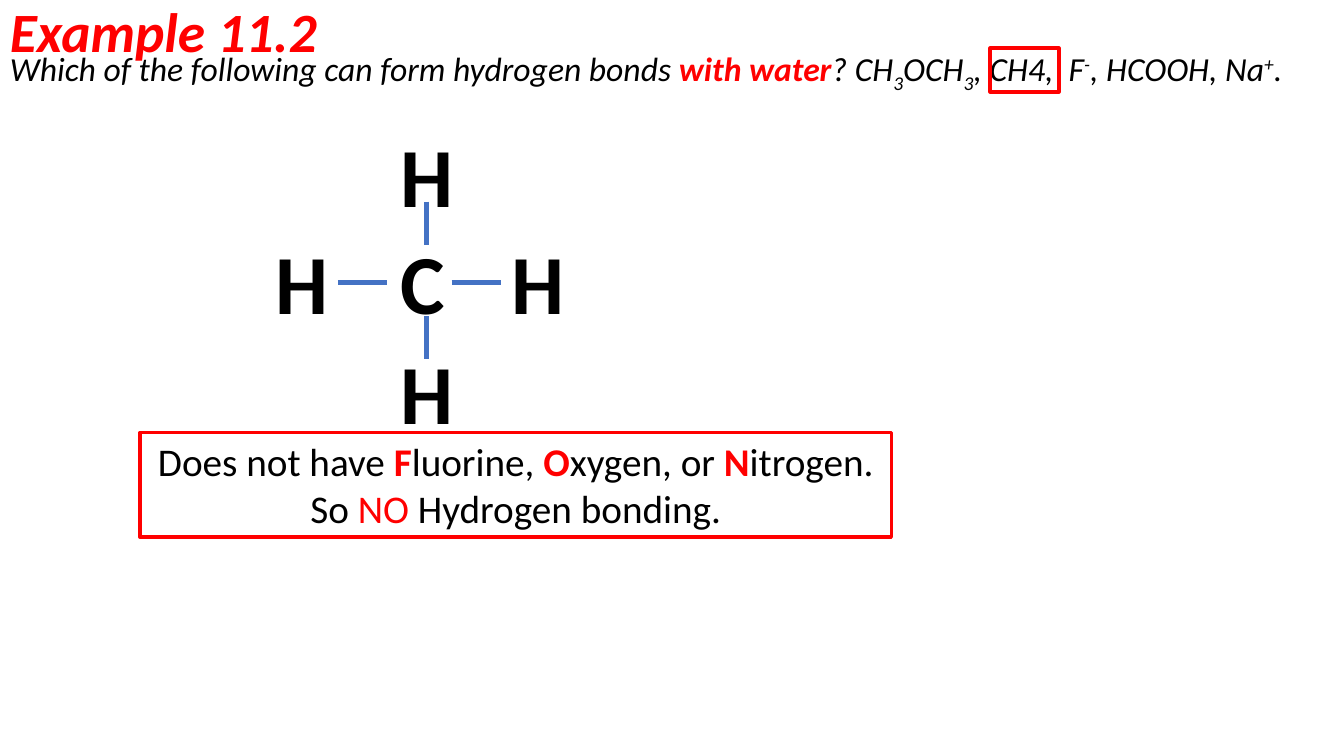
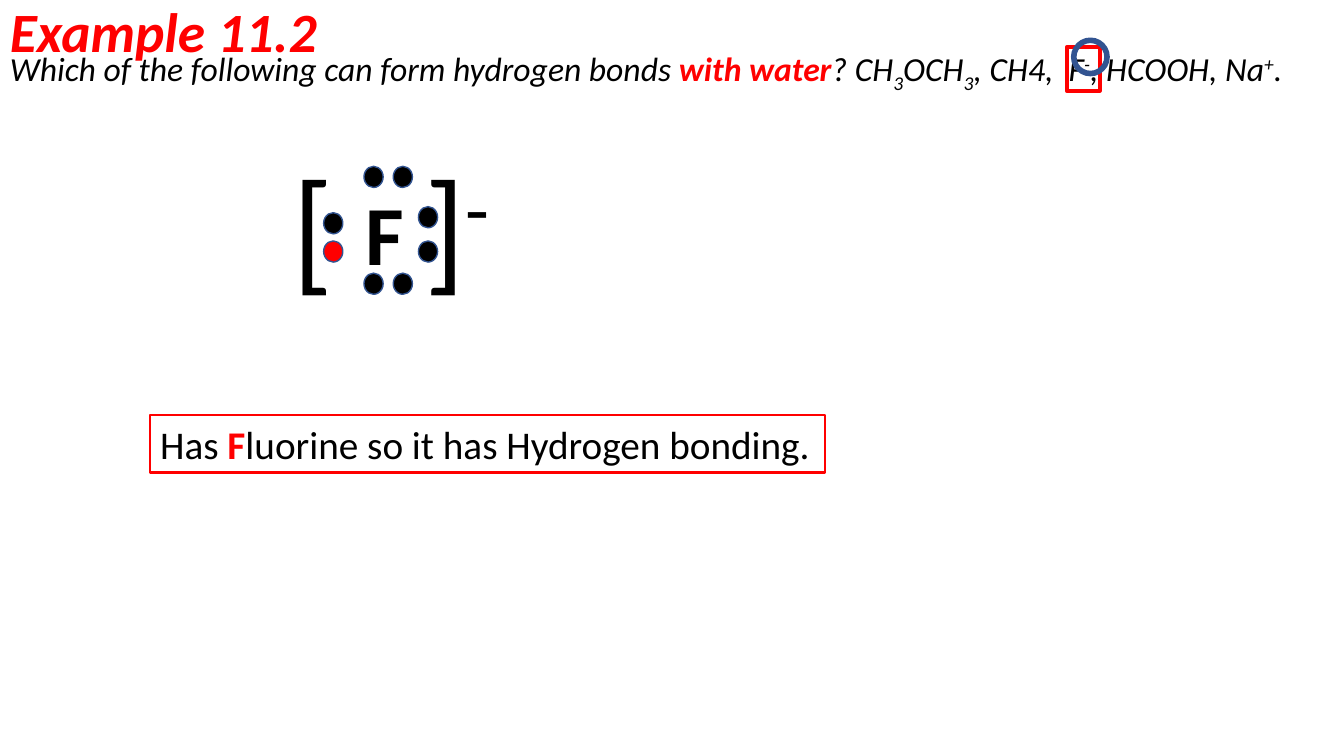
from pptx import Presentation
from pptx.dml.color import RGBColor
from pptx.enum.shapes import MSO_CONNECTOR, MSO_SHAPE
from pptx.enum.text import MSO_ANCHOR, PP_ALIGN
from pptx.oxml.ns import qn
from pptx.util import Inches, Pt
from lxml import etree

RECTANGLE, OVAL = MSO_SHAPE.RECTANGLE, MSO_SHAPE.OVAL
STRAIGHT = MSO_CONNECTOR.STRAIGHT
TOP, MIDDLE = MSO_ANCHOR.TOP, MSO_ANCHOR.MIDDLE
LEFT, CENTER = PP_ALIGN.LEFT, PP_ALIGN.CENTER

FONT = "Calibri"
RED, BLACK, BOND_BLUE, DOT_BLUE = "FF0000", "000000", "4472C4", "325491"
WIDTH, HEIGHT = 13.33, 7.5
BASELINES = {"sub": "-25000", "super": "30000"}

QUESTION = [
    ("Which of the following can form hydrogen bonds ", ""),
    ("with water", "red bold"), ("? CH", ""), ("3", "sub"), ("OCH", ""),
    ("3", "sub"), (", CH4,  F", ""), ("-", "super"), (", HCOOH, Na", ""),
    ("+", "super"), (".", ""),
]


def write(box, spans, size, color=BLACK, bold=False, italic=False,
          align=LEFT, anchor=TOP):
    """Fill a box with one paragraph; each span is (text, style words)."""
    frame = box.text_frame
    frame.word_wrap = True
    frame.vertical_anchor = anchor
    para = frame.paragraphs[0]
    para.alignment = align
    font = para.font
    font.name, font.size, font.bold, font.italic = FONT, Pt(size), bold, italic
    font.color.rgb = RGBColor.from_string(color)
    for text, style in spans:
        span = para.add_run()
        span.text = text
        for word in style.split():
            if word == "red":
                span.font.color.rgb = RGBColor.from_string(RED)
            elif word == "bold":
                span.font.bold = True
            else:
                span.font._element.set("baseline", BASELINES[word])
    return para


def draw(page, kind, area, line, weight, fill=None):
    shape = page.shapes.add_shape(kind, *map(Inches, area))
    shape.shadow.inherit = False
    shape.line.color.rgb = RGBColor.from_string(line)
    shape.line.width = Pt(weight)
    if fill:
        shape.fill.solid()
        shape.fill.fore_color.rgb = RGBColor.from_string(fill)
    else:
        shape.fill.background()
    return shape


deck = Presentation()
deck.slide_width, deck.slide_height = Inches(WIDTH), Inches(HEIGHT)
pages = [deck.slides.add_slide(deck.slide_layouts[6]) for _ in range(2)]
methane, fluoride = pages

# Shared heading and question
for page in pages:
    title = page.shapes.add_textbox(0, Inches(-0.01), Inches(11.5), Inches(0.71))
    heading = write(title, [("Example 11.2", "")], 39.6, RED, True, True,
                    anchor=MIDDLE)
    heading.line_spacing = 0.9
    question = page.shapes.add_textbox(0, Inches(0.43), Inches(WIDTH), Inches(0.5))
    write(question, QUESTION, 24, italic=True)

# Methane: a carbon with four hydrogens
draw(methane, RECTANGLE, (9.82, 0.48, 0.68, 0.43), RED, 2.75)

columns, rows = (2.63, 3.87, 4.98), (1.18, 2.24, 3.33)
atoms = [("H", 1, 0), ("H", 0, 1), ("C", 1, 1), ("H", 2, 1), ("H", 1, 2)]
for symbol, column, row in atoms:
    atom = methane.shapes.add_textbox(
        Inches(columns[column]), Inches(rows[row]), Inches(0.74), Inches(1.11))
    write(atom, [(symbol, "")], 60, bold=True)

bond_x, bond_y = 4.23, 2.8
bonds = [(bond_x, 2, bond_x, 2.43), (bond_x, 3.14, bond_x, 3.56),
         (3.35, bond_y, 3.84, bond_y), (4.48, bond_y, 4.97, bond_y)]
for ends in bonds:
    bond = methane.shapes.add_connector(STRAIGHT, *map(Inches, ends))
    bond.line.color.rgb = RGBColor.from_string(BOND_BLUE)
    bond.line.width = Pt(3.75)
    etree.SubElement(bond._element.spPr, qn("a:effectLst"))

answer = draw(methane, RECTANGLE, (1.39, 4.29, 7.45, 1.04), RED, 2.5)
write(answer, [
    ("Does not have ", ""), ("F", "red bold"), ("luorine, ", ""),
    ("O", "red bold"), ("xygen, or ", ""), ("N", "red bold"),
    ("itrogen. So ", ""), ("NO", "red"), (" Hydrogen bonding.", ""),
], 28, align=CENTER)

# Fluoride: a Lewis structure with four electron pairs
draw(fluoride, RECTANGLE, (10.58, 0.47, 0.33, 0.43), RED, 2.75)
symbol_box = fluoride.shapes.add_textbox(
    Inches(3.53), Inches(1.75), Inches(0.56), Inches(1.11))
write(symbol_box, [("F", "")], 60, bold=True)

electrons = [(x, y, BLACK) for y in (1.65, 2.71) for x in (3.61, 3.9)]
electrons += [(4.15, 2.05, BLACK), (4.15, 2.39, BLACK),
              (3.21, 2.11, BLACK), (3.21, 2.39, RED)]
for x, y, color in electrons:
    draw(fluoride, OVAL, (x, y, 0.19, 0.21), DOT_BLUE, 1, color)
draw(fluoride, OVAL, (10.65, 0.4, 0.33, 0.33), DOT_BLUE, 4)

brackets = [(2.8, [("[", "")]), (4.11, [("]", ""), ("-", "super")])]
for x, spans in brackets:
    bracket = fluoride.shapes.add_textbox(
        Inches(x), Inches(1.37), Inches(1.14), Inches(1.72))
    write(bracket, spans, 96)

answer = draw(fluoride, RECTANGLE, (1.49, 4.12, 6.69, 0.57), RED, 1.75)
write(answer, [("Has ", ""), ("F", "red bold"),
               ("luorine so it has Hydrogen bonding.", "")], 28)

deck.save("out.pptx")
